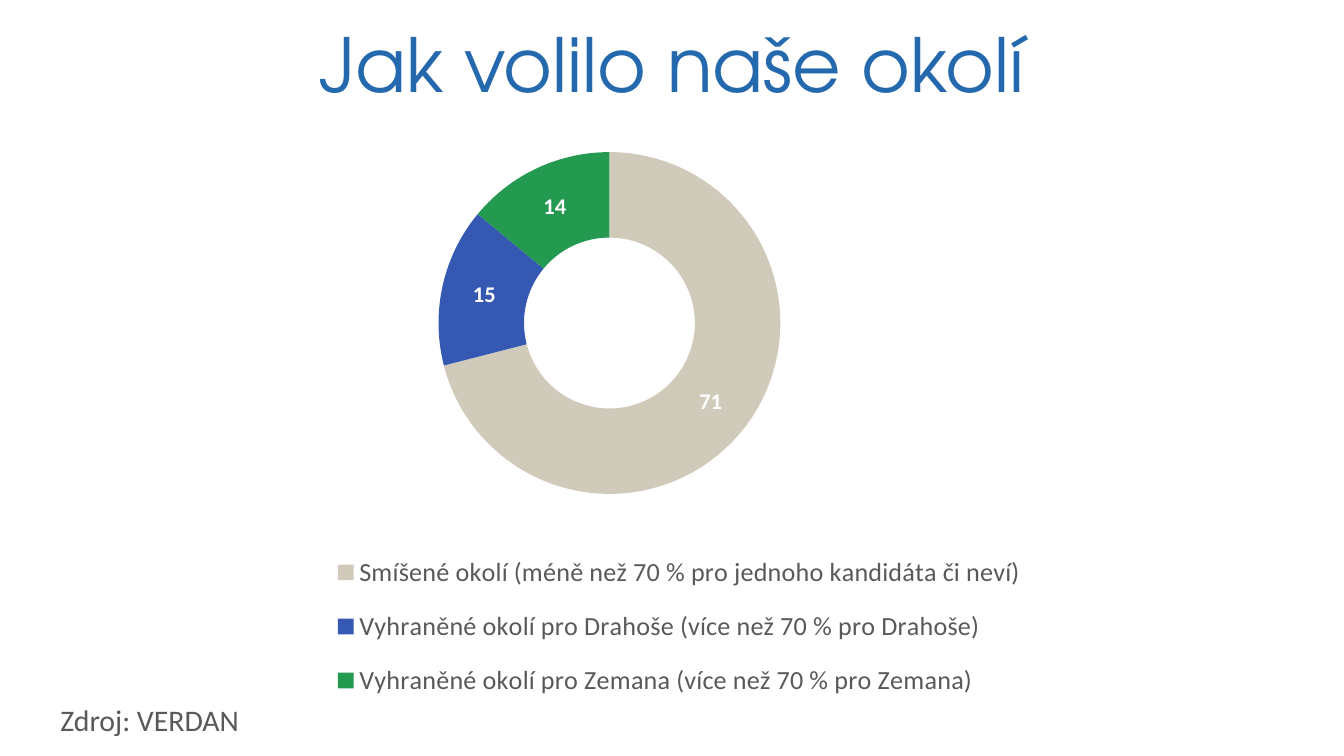
"""Build a slide with a doughnut chart of how voters' surroundings voted."""
from dataclasses import dataclass

from lxml.etree import SubElement
from pptx import Presentation
from pptx.chart.chart import Chart
from pptx.chart.data import CategoryChartData
from pptx.dml.color import RGBColor
from pptx.enum.chart import XL_CHART_TYPE, XL_LEGEND_POSITION
from pptx.enum.text import MSO_ANCHOR, PP_ALIGN
from pptx.oxml.ns import qn
from pptx.slide import Slide
from pptx.text.text import Font
from pptx.util import Inches, Pt

WIDTH = Inches(10)
HEIGHT = WIDTH * 9 // 16
COLORS = {
    "title": "2469AD",
    "text": "595959",
    "label": "FFFFFF",
    "mixed": "D0CABA",
    "drahos": "3558B2",
    "zeman": "249A50",
}


@dataclass(frozen=True)
class Frame:
    """A rectangle given as percentages of its container."""
    left: float
    top: float
    width: float
    height: float

    def on_slide(self) -> tuple[int, int, int, int]:
        """Return the rectangle in slide units."""
        return (int(self.left * WIDTH / 100), int(self.top * HEIGHT / 100),
                int(self.width * WIDTH / 100), int(self.height * HEIGHT / 100))


@dataclass(frozen=True)
class Slice:
    """One share of the doughnut."""
    name: str
    value: int
    color: str


SLICES = [
    Slice("Smíšené okolí (méně než 70 % pro jednoho kandidáta či neví)", 71, "mixed"),
    Slice("Vyhraněné okolí pro Drahoše (více než 70 % pro Drahoše)", 15, "drahos"),
    Slice("Vyhraněné okolí pro Zemana (více než 70 % pro Zemana)", 14, "zeman"),
]


def style_font(font: Font, size: int, color: str, name: str = "Calibri", bold: bool = False) -> None:
    """Set the face, size, weight and colour of a font."""
    font.name, font.size, font.bold = name, Pt(size), bold
    font.color.rgb = RGBColor.from_string(COLORS[color])


def place_in_chart(chart: Chart, tag: str, index: int, frame: Frame, inner: bool = False) -> None:
    """Give a chart part a manual layout."""
    parent = next(chart.element.iter(qn(tag)))
    for old in parent.findall(qn("c:layout")):
        parent.remove(old)
    layout = SubElement(parent, qn("c:layout"))
    parent.insert(index, layout)
    manual = SubElement(layout, qn("c:manualLayout"))
    settings = {"layoutTarget": "inner"} if inner else {}
    settings |= {"xMode": "edge", "yMode": "edge", "x": frame.left / 100, "y": frame.top / 100,
                 "w": frame.width / 100, "h": frame.height / 100}
    for name, value in settings.items():
        SubElement(manual, qn(f"c:{name}")).set("val", str(value))


def add_title(page: Slide, text: str, frame: Frame) -> None:
    """Fill and place the title placeholder."""
    title = page.shapes.title
    title.left, title.top, title.width, title.height = frame.on_slide()
    title.text_frame.text = text
    title.text_frame.vertical_anchor = MSO_ANCHOR.MIDDLE
    para = title.text_frame.paragraphs[0]
    para.alignment = PP_ALIGN.CENTER
    style_font(para.font, 40, "title", "TeX Gyre Adventor")


def add_source(page: Slide, text: str, frame: Frame) -> None:
    """Add the source line."""
    box = page.shapes.add_textbox(*frame.on_slide())
    box.text_frame.word_wrap = True
    box.text_frame.text = text
    style_font(box.text_frame.paragraphs[0].font, 16, "text")


def add_doughnut(page: Slide, slices: list[Slice], frame: Frame) -> None:
    """Add the doughnut with value labels and a legend below."""
    data = CategoryChartData(number_format="#,##0")
    data.categories = [part.name for part in slices]
    data.add_series("Series 1", [part.value for part in slices])
    chart = page.shapes.add_chart(XL_CHART_TYPE.DOUGHNUT, *frame.on_slide(), data).chart
    chart.has_title = False
    chart.font.name, chart.font.size = "Calibri", Pt(10)

    plot = chart.plots[0]
    plot.vary_by_categories = True
    for index, part in enumerate(slices):
        point = plot.series[0].points[index]
        point.format.fill.solid()
        point.format.fill.fore_color.rgb = RGBColor.from_string(COLORS[part.color])
        point.format.line.fill.background()
    labels = plot.series[0].data_labels
    labels.show_value = True
    labels.show_percentage = False
    labels.number_format, labels.number_format_is_linked = "#,##0", False
    style_font(labels.font, 12, "label", bold=True)

    chart.has_legend = True
    chart.legend.position = XL_LEGEND_POSITION.BOTTOM
    chart.legend.include_in_layout = False
    style_font(chart.legend.font, 14, "text")
    place_in_chart(chart, "c:plotArea", 0, Frame(31.5, 0, 29.1, 59.5), inner=True)
    place_in_chart(chart, "c:legend", 1, Frame(22, 66.5, 60, 32))


def main() -> None:
    """Build and save the deck."""
    deck = Presentation()
    deck.slide_width, deck.slide_height = WIDTH, HEIGHT
    page = deck.slides.add_slide(deck.slide_layouts[5])
    add_title(page, "Jak volilo naše okolí", Frame(5, 0, 90, 16.7))
    add_doughnut(page, SLICES, Frame(5.1, 20.1, 87.4, 76.1))
    add_source(page, "Zdroj: VERDAN", Frame(3.5, 91.9, 31.5, 6.6))
    deck.save("out.pptx")


if __name__ == "__main__":
    main()
